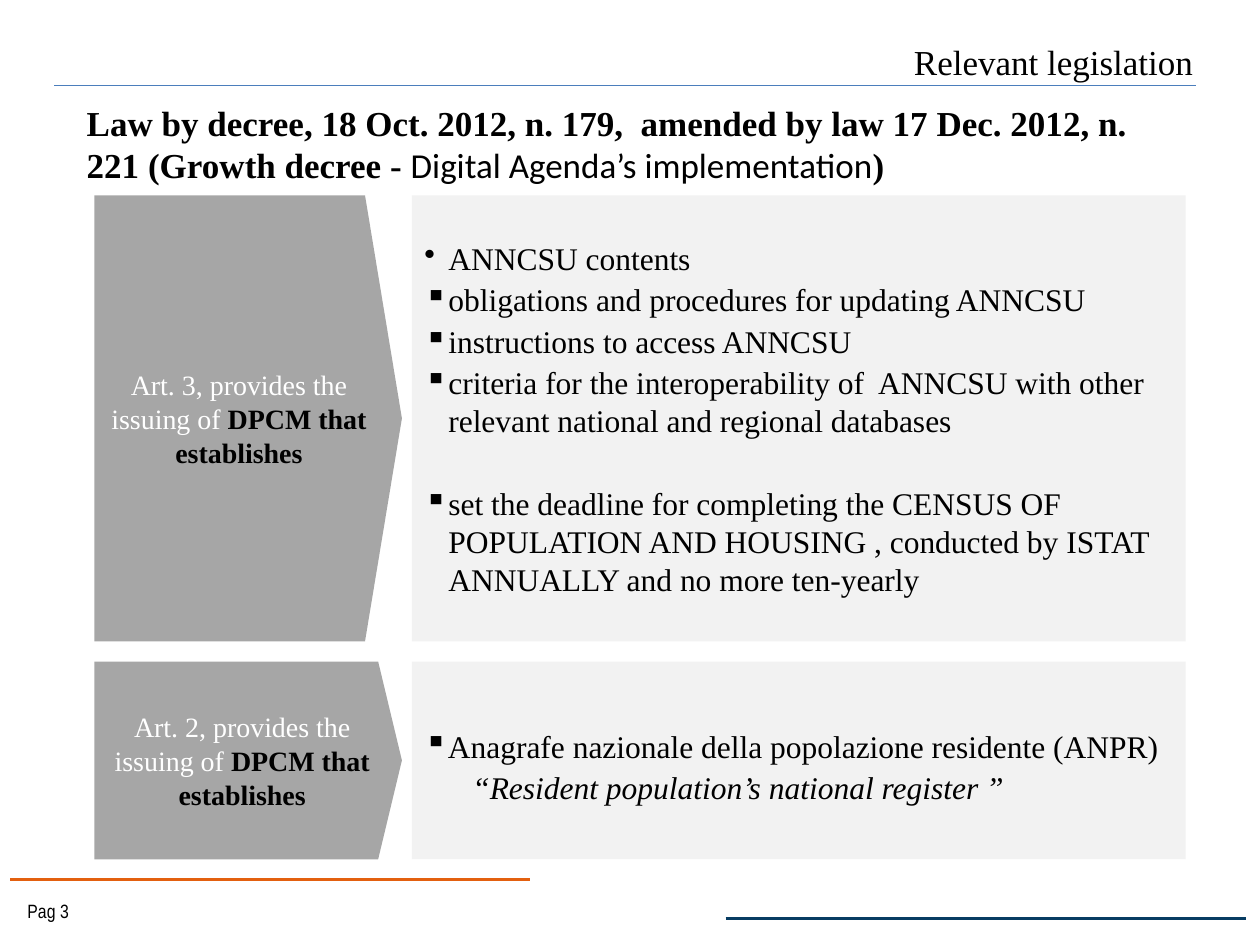
from lxml import etree
from pptx import Presentation
from pptx import util as u
from pptx.dml.color import RGBColor
from pptx.enum import shapes, text
from pptx.oxml.ns import qn

BLACK = RGBColor(0x00, 0x00, 0x00)
WHITE = RGBColor(0xFF, 0xFF, 0xFF)
ARROW_GREY = RGBColor(0xA6, 0xA6, 0xA6)
PANEL_GREY = RGBColor(0xF2, 0xF2, 0xF2)
RULE_BLUE = RGBColor(0x4B, 0x7E, 0xBC)
ORANGE = RGBColor(0xE3, 0x60, 0x0F)
NAVY = RGBColor(0x07, 0x3C, 0x62)
SERIF = "Times New Roman"
LEFT, CENTER, RIGHT = text.PP_ALIGN.LEFT, text.PP_ALIGN.CENTER, text.PP_ALIGN.RIGHT
TOP, MIDDLE = text.MSO_ANCHOR.TOP, text.MSO_ANCHOR.MIDDLE

deck = Presentation()
deck.slide_width, deck.slide_height = u.Inches(10), u.Inches(7.5)
page = deck.slides.add_slide(deck.slide_layouts[6])
column, row = deck.slide_width / 100, deck.slide_height / 100


def place(left, top, width, height):
    return [int(left * column), int(top * row), int(width * column), int(height * row)]


def write(box, paragraphs, frame_format, size, align=LEFT):
    frame = box.text_frame
    for name, value in {"word_wrap": True, **frame_format}.items():
        setattr(frame, name, value)
    for index, (bullet, margin, indent, gap, spans) in enumerate(paragraphs):
        para = frame.paragraphs[0] if index == 0 else frame.add_paragraph()
        properties = para._p.get_or_add_pPr()
        properties.set("marL", str(int(margin * column)))
        properties.set("indent", str(int(indent * column)))
        if bullet:
            etree.SubElement(properties, qn("a:buChar")).set("char", bullet)
        para.alignment = align
        if index:
            para.space_before = u.Pt(gap)
        for words, color, changes in spans:
            span = para.add_run()
            span.text = words
            for name, value in {"size": u.Pt(size), "name": SERIF, **changes}.items():
                setattr(span.font, name, value)
            span.font.color.rgb = color


rules = [
    (4.3, 94.9, 9.07, RULE_BLUE, 0.75),
    (0.8, 42.1, 93.07, ORANGE, 2),
    (57.6, 98.9, 97.2, NAVY, 2),
]
for start, end, level, color, weight in rules:
    rule = page.shapes.add_connector(
        shapes.MSO_CONNECTOR.STRAIGHT,
        int(start * column), int(level * row), int(end * column), int(level * row))
    rule.line.color.rgb = color
    rule.line.width = u.Pt(weight)
    etree.SubElement(rule._element.spPr, qn("a:effectLst"))

labels = [
    (place(1.2, 94.53, 11.7, 3.73), TOP, LEFT, 11,
     [("Pag 3", BLACK, {"name": "Arial Narrow"})]),
    (place(10.7, 2.8, 85, 7.33), MIDDLE, RIGHT, 20,
     [("Relevant legislation", BLACK, {})]),
    (place(5.9, 10.13, 85, 10.5), TOP, LEFT, 20,
     [("Law by decree, 18 Oct. 2012, n. 179,  amended by law 17 Dec. 2012, n. 221 (Growth decree - ",
       BLACK, {"bold": True}),
      ("Digital Agenda’s implementation", BLACK, {"name": "Calibri"}),
      (")", BLACK, {"bold": True})]),
]
for area, anchor, align, size, spans in labels:
    label = page.shapes.add_textbox(*area)
    write(label, [(None, 0, 0, 0, spans)], {"vertical_anchor": anchor}, size, align)

contents = [
    ("•", "ANNCSU contents", 0),
    ("▪", "obligations and procedures for updating ANNCSU", 2),
    ("▪", "instructions to access ANNCSU", 2),
    ("▪", "criteria for the interoperability of  ANNCSU with other relevant national and regional databases", 2),
    ("▪", "set the deadline for completing the CENSUS OF POPULATION AND HOUSING , "
          "conducted by ISTAT ANNUALLY and no more ten-yearly", 26),
]
duties = [(bullet, 1.9, -1.9, gap, [(words, BLACK, {})]) for bullet, words, gap in contents]
register = [
    ("▪", 0, 0, 0, [("Anagrafe nazionale della popolazione residente (ANPR)", BLACK, {})]),
    (None, 3.8, 0, 2, [("“Resident population’s national register ”", BLACK, {"italic": True})]),
]
articles = [
    ("Art. 3", 20.67, 47.2, duties, 0),
    ("Art. 2", 70, 20.93, register, 1.2),
]
for article, top, height, details, drop in articles:
    heading = [(None, 0, 0, 0, [
        (f"{article}, provides the issuing of ", WHITE, {}),
        ("DPCM that establishes", BLACK, {"bold": True})])]
    parts = [
        (shapes.MSO_SHAPE.PENTAGON, 7.5, 24.4, ARROW_GREY, heading, 16, CENTER, 0),
        (shapes.MSO_SHAPE.RECTANGLE, 32.7, 61.4, PANEL_GREY, details, 18, LEFT, drop),
    ]
    for kind, left, width, fill, paragraphs, size, align, inset in parts:
        block = page.shapes.add_shape(kind, *place(left, top, width, height))
        block.shadow.inherit = False
        block.fill.solid()
        block.fill.fore_color.rgb = fill
        block.line.fill.background()
        if kind == shapes.MSO_SHAPE.PENTAGON:
            block.adjustments[0] = 0.12
        write(block, paragraphs,
              {"vertical_anchor": MIDDLE, "margin_top": int(inset * row), "margin_bottom": 0},
              size, align)

deck.save("out.pptx")
